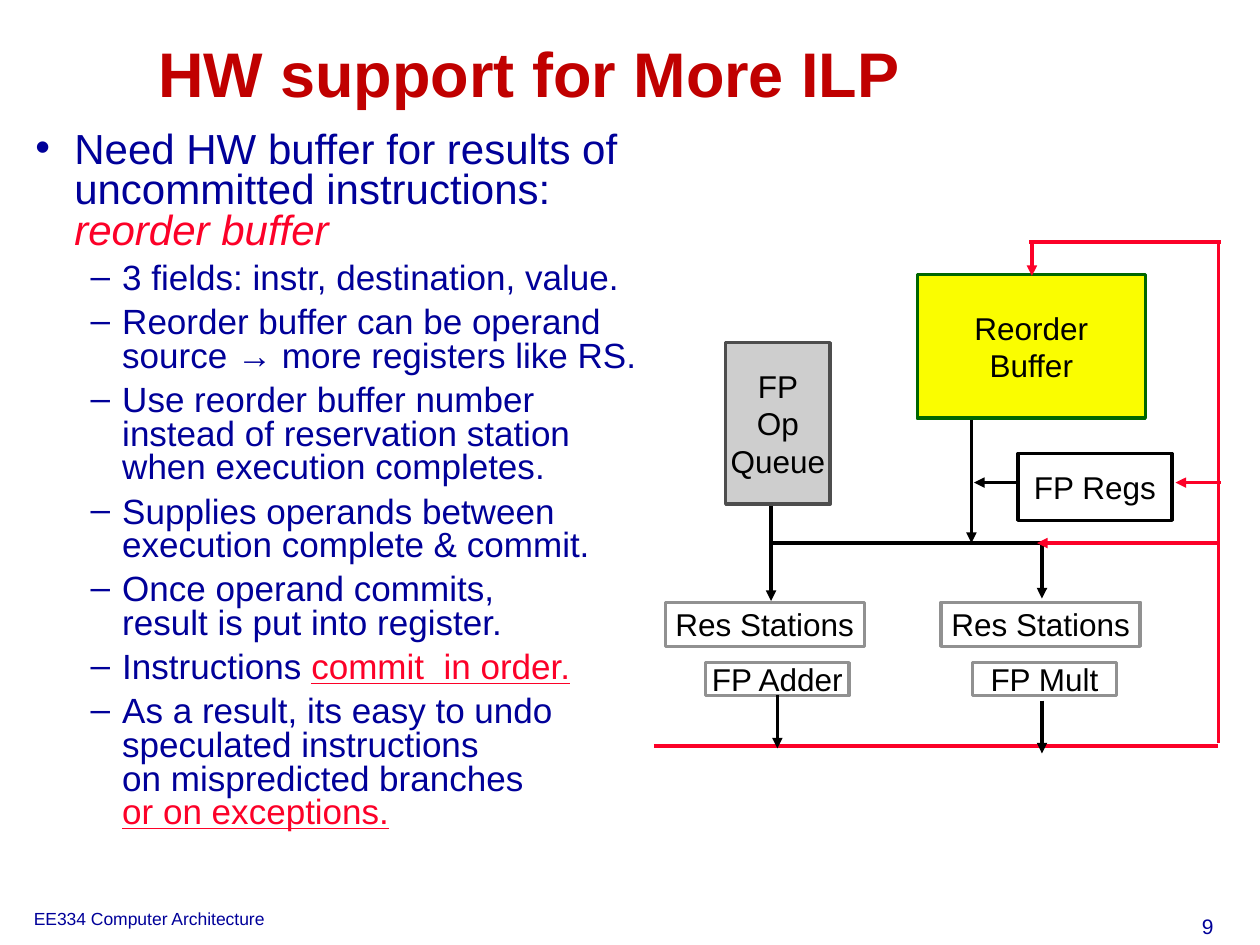
from copy import deepcopy

from lxml import etree
from pptx import Presentation
from pptx.dml.color import RGBColor
from pptx.enum.shapes import MSO_CONNECTOR, MSO_SHAPE
from pptx.enum.text import MSO_ANCHOR, MSO_AUTO_SIZE, PP_ALIGN
from pptx.oxml.ns import qn
from pptx.util import Inches, Pt

RECT, STRAIGHT = MSO_SHAPE.RECTANGLE, MSO_CONNECTOR.STRAIGHT
LEFT, CENTER, RIGHT = PP_ALIGN.LEFT, PP_ALIGN.CENTER, PP_ALIGN.RIGHT
MIDDLE, TOP = MSO_ANCHOR.MIDDLE, MSO_ANCHOR.TOP
NO_FIT = MSO_AUTO_SIZE.NONE

NAVY = RGBColor(0x00, 0x00, 0x99)
DARK_RED = RGBColor(0xC0, 0x00, 0x00)
RED = RGBColor(0xFC, 0x01, 0x28)
BLACK = RGBColor(0x00, 0x00, 0x00)
WHITE = RGBColor(0xFF, 0xFF, 0xFF)
YELLOW = RGBColor(0xFA, 0xFD, 0x00)
GREEN = RGBColor(0x00, 0x66, 0x00)
LIGHT_GRAY = RGBColor(0xCE, 0xCE, 0xCE)
MID_GRAY = RGBColor(0x91, 0x91, 0x91)
DARK_GRAY = RGBColor(0x4D, 0x4D, 0x4D)

# Each item: plain text, then accented text
SUB_ITEMS = [
    ("3 fields: instr, destination, value.", ""),
    ("Reorder buffer can be operand source → more registers like RS.", ""),
    ("Use reorder buffer number instead of reservation station "
     "when execution completes.", ""),
    ("Supplies operands between execution complete & commit.", ""),
    ("Once operand commits, \nresult is put into register.", ""),
    ("Instructions ", "commit  in order."),
    ("As a result, its easy to undo speculated instructions \n"
     "on mispredicted branches \n", "or on exceptions."),
]


class SlideBuilder:
    font = "Arial"

    def __init__(self, prs):
        self.s = prs.slides.add_slide(prs.slide_layouts[1])

    def place(self, sp, left, top, width, height):
        sp.left, sp.top = Inches(left), Inches(top)
        sp.width, sp.height = Inches(width), Inches(height)

    def style(self, r, size, color, bold=False):
        r.font.name, r.font.size = self.font, Pt(size)
        r.font.color.rgb, r.font.bold = color, bold

    def fill_text(self, tf, text, size, color, align, anchor, bold=False):
        tf.text = text
        tf.vertical_anchor = anchor
        tf.auto_size = NO_FIT
        for p in tf.paragraphs:
            p.alignment = align
            for r in p.runs:
                self.style(r, size, color, bold)

    def title(self, text, *box):
        sp = self.s.shapes.title
        self.place(sp, *box)
        self.fill_text(sp.text_frame, text, 36, DARK_RED, CENTER, MIDDLE, True)
        sp.text_frame.paragraphs[0].line_spacing = 0.9

    def body(self, *box):
        sp = self.s.placeholders[1]
        self.place(sp, *box)
        tf = sp.text_frame
        tf.auto_size, tf.vertical_anchor = NO_FIT, TOP
        return tf

    def bullet(self, p, plain, accent, level, size, left, hanging, char):
        p.level, p.alignment = level, LEFT
        p.line_spacing, p.space_before = 0.8, Pt(0.3 * size)
        p.text = plain
        for r in p.runs:
            self.style(r, size, NAVY)
        # Line breaks take the size of the text around them
        for br in p._p.findall(qn("a:br")):
            br.append(deepcopy(p.runs[0].font._element))
        if accent:
            r = p.add_run()
            r.text = accent
            self.style(r, size, RED)
            r.font.italic, r.font.underline = level == 0, level > 0
        pPr = p._p.get_or_add_pPr()
        pPr.set("marL", str(Inches(left)))
        pPr.set("indent", str(-Inches(hanging)))
        etree.SubElement(pPr, qn("a:buChar")).set("char", char)

    def label(self, text, size, align, *box):
        tf = self.s.shapes.add_textbox(*map(Inches, box)).text_frame
        self.fill_text(tf, text, size, NAVY, align, TOP)
        tf.word_wrap = True

    def block(self, text, fill, line, *box):
        sp = self.s.shapes.add_shape(RECT, *map(Inches, box))
        sp.shadow.inherit = False
        sp.fill.solid()
        sp.fill.fore_color.rgb = fill
        sp.line.color.rgb, sp.line.width = line, Pt(2)
        self.fill_text(sp.text_frame, text, 18, BLACK, CENTER, MIDDLE)
        sp.text_frame.word_wrap = False

    def wire(self, color, *ends, arrow=False, width=2):
        cx = self.s.shapes.add_connector(STRAIGHT, *map(Inches, ends))
        cx.line.color.rgb, cx.line.width = color, Pt(width)
        if arrow:
            ln = cx.line._get_or_add_ln()
            etree.SubElement(ln, qn("a:tailEnd")).set("type", "triangle")
        etree.SubElement(cx._element.spPr, qn("a:effectLst"))


def main():
    prs = Presentation()
    prs.slide_width, prs.slide_height = Inches(10), Inches(7.5)
    b = SlideBuilder(prs)

    b.label("9", 12, RIGHT, 9.33, 7.2, 0.4, 0.3)
    b.label("EE334 Computer Architecture", 10, LEFT, 0.17, 7.16, 4.83, 0.27)
    b.title("HW support for More ILP", 1.05, 0.39, 6.3, 0.45)

    tf = b.body(0.18, 1, 5.07, 5.92)
    b.bullet(tf.paragraphs[0],
             "Need HW buffer for results of uncommitted instructions: ",
             "reorder buffer", 0, 24, 0.31, 0.31, "•")
    for plain, accent in SUB_ITEMS:
        b.bullet(tf.add_paragraph(), plain, accent, 1, 20, 0.69, 0.25, "–")

    b.block("Reorder\nBuffer", YELLOW, GREEN, 7.28, 2.18, 1.81, 1.14)
    b.block("FP Regs", WHITE, BLACK, 8.08, 3.6, 1.22, 0.53)
    b.block("FP\nOp\nQueue", LIGHT_GRAY, DARK_GRAY, 5.76, 2.72, 0.83, 1.28)
    for unit, unit_x, station_x in (("FP Adder", 5.6, 5.28),
                                    ("FP Mult", 7.72, 7.47)):
        b.block(unit, WHITE, MID_GRAY, unit_x, 5.26, 1.14, 0.26)
        b.block("Res Stations", WHITE, MID_GRAY, station_x, 4.78, 1.58, 0.35)

    # Result bus and its return path
    bus_x, bus_y, operand_y, regs_y = 9.67, 5.92, 4.31, 3.83
    b.wire(RED, 5.19, bus_y, bus_x, bus_y, width=2.25)
    b.wire(RED, bus_x, 1.92, bus_x, 5.9)
    b.wire(RED, 9.69, 1.92, 8.17, 1.92)
    b.wire(RED, 8.19, 1.92, 8.19, 2.19, arrow=True)

    # Operand paths into the stations, results out of the units
    queue_x, mult_x, buffer_x = 6.12, 8.27, 7.71
    b.wire(BLACK, 6.17, 5.52, 6.17, 5.94, arrow=True)
    b.wire(BLACK, mult_x, 5.56, mult_x, 5.98, arrow=True)
    b.wire(BLACK, queue_x, 4.02, queue_x, 4.77, arrow=True)
    b.wire(BLACK, queue_x, operand_y, mult_x, operand_y)
    b.wire(BLACK, mult_x, operand_y, mult_x, 4.75, arrow=True)
    b.wire(BLACK, buffer_x, 3.33, buffer_x, operand_y, arrow=True)
    b.wire(BLACK, 8.08, regs_y, 7.73, regs_y, arrow=True)
    b.wire(RED, bus_x, operand_y, 8.23, operand_y, arrow=True)
    b.wire(RED, 9.69, regs_y, 9.33, regs_y, arrow=True)

    prs.save("out.pptx")


if __name__ == "__main__":
    main()
